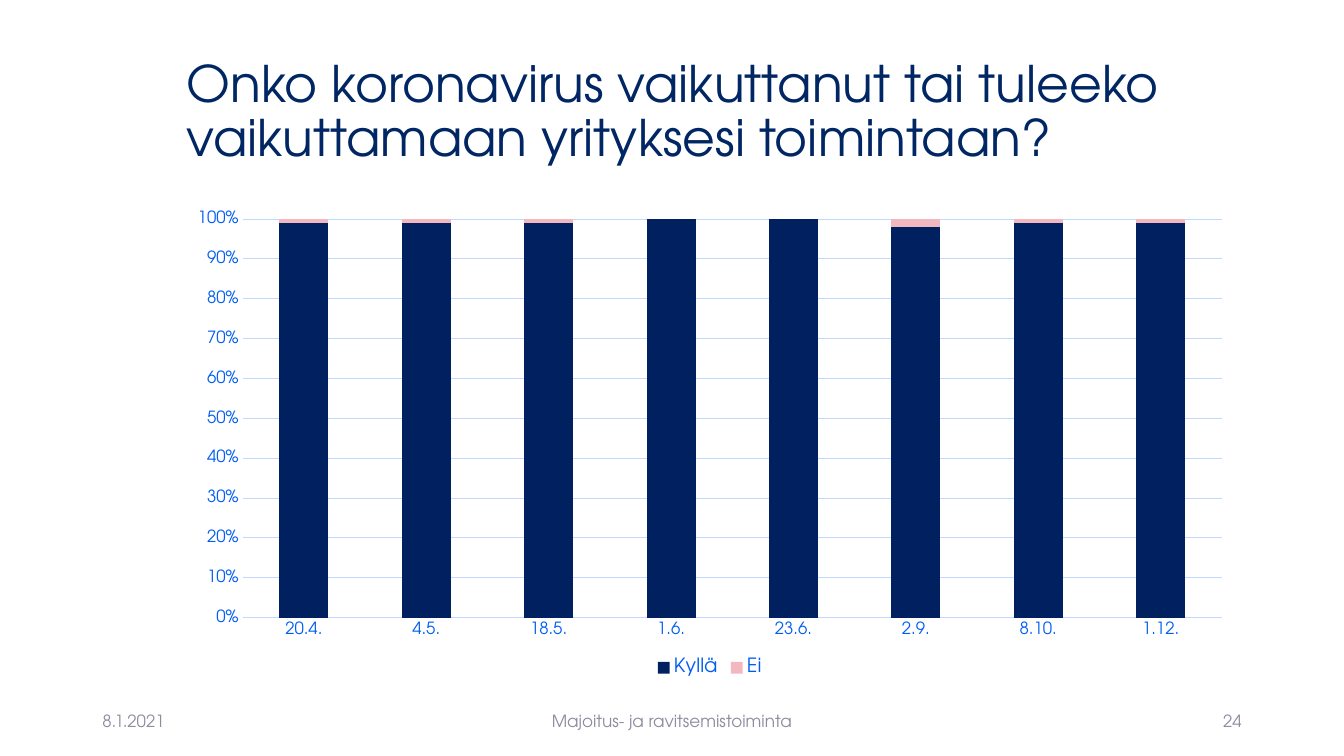
from pptx import Presentation
from pptx.chart.data import CategoryChartData as ChartData
from pptx.dml.color import RGBColor
from pptx.enum.chart import XL_CHART_TYPE as ChartType
from pptx.enum.chart import XL_LEGEND_POSITION as LegendPosition
from pptx.enum.chart import XL_TICK_MARK as TickMark
from pptx.enum.text import MSO_ANCHOR as Anchor
from pptx.enum.text import MSO_AUTO_SIZE as AutoSize
from pptx.enum.text import PP_ALIGN as Align
from pptx.util import Inches, Pt

TITLE_BLUE = RGBColor(0x00, 0x26, 0x63)
LABEL_BLUE = RGBColor(0x00, 0x5D, 0xF3)
GRID_BLUE = RGBColor(0xC1, 0xD9, 0xFF)
FOOTER_GREY = RGBColor(0x8C, 0x8E, 0x9F)
YES_NAVY = RGBColor(0x00, 0x20, 0x60)
NO_PINK = RGBColor(0xF2, 0xB7, 0xBF)

FONT = "TeX Gyre Adventor"
COLUMNS, ROWS = 160, 90  # grid cells of a twelfth of an inch
CELL = Inches(1) / 12


class SlideBuilder:
    """Holds the style and the current slide; places are in grid cells."""

    def __init__(self, deck):
        self.slide = deck.slides.add_slide(deck.slide_layouts[5])

    def place(self, *cells):
        return [round(cell * CELL) for cell in cells]

    def style(self, font, size, color):
        font.name = FONT
        font.size = Pt(size)
        font.bold = False
        font.color.rgb = color

    def fill_text(self, box, text, size, color, align):
        frame = box.text_frame
        frame.text = text
        frame.word_wrap = True
        frame.auto_size = AutoSize.NONE
        frame.vertical_anchor = Anchor.MIDDLE
        para = frame.paragraphs[0]
        para.alignment = align
        self.style(para.runs[0].font, size, color)
        return para

    def title(self, text, *cells):
        box = self.slide.shapes.title
        box.left, box.top, box.width, box.height = self.place(*cells)
        para = self.fill_text(box, text, 36, TITLE_BLUE, Align.LEFT)
        para.line_spacing = 0.9

    def footer(self, text, column, width, align):
        box = self.slide.shapes.add_textbox(*self.place(column, 83.4, width, 4.8))
        self.fill_text(box, text, 12, FOOTER_GREY, align)

    def stacked_chart(self, dates, answers, *cells):
        data = ChartData(number_format="0")
        data.categories = dates
        for name, values, _ in answers:
            data.add_series(name, values)
        frame = self.slide.shapes.add_chart(
            ChartType.COLUMN_STACKED_100, *self.place(*cells), data)
        chart = frame.chart
        chart.has_title = False
        self.style(chart.font, 10, TITLE_BLUE)

        # Columns
        plot = chart.plots[0]
        plot.gap_width = 150
        plot.overlap = 100
        plot.vary_by_categories = False
        for series, (_, _, color) in zip(plot.series, answers):
            series.format.fill.solid()
            series.format.fill.fore_color.rgb = color
            series.invert_if_negative = False

        # Axes and gridlines
        date_axis, share_axis = chart.category_axis, chart.value_axis
        for axis in (date_axis, share_axis):
            axis.major_tick_mark = axis.minor_tick_mark = TickMark.NONE
            self.style(axis.tick_labels.font, 12, LABEL_BLUE)
        share_axis.minimum_scale, share_axis.maximum_scale = 0, 1
        share_axis.major_unit = 0.1
        share_axis.tick_labels.number_format = "0%"
        share_axis.tick_labels.number_format_is_linked = False
        share_axis.format.line.fill.background()
        for line in (date_axis.format.line, share_axis.major_gridlines.format.line):
            line.color.rgb = GRID_BLUE
            line.width = Pt(0.75)

        # Legend
        chart.has_legend = True
        chart.legend.position = LegendPosition.BOTTOM
        chart.legend.include_in_layout = False
        self.style(chart.legend.font, 14, LABEL_BLUE)


def main():
    deck = Presentation()
    deck.slide_width = round(COLUMNS * CELL)
    deck.slide_height = round(ROWS * CELL)
    page = SlideBuilder(deck)

    # Heading
    page.title("Onko koronavirus vaikuttanut tai tuleeko vaikuttamaan "
               "yrityksesi toimintaan?", 21, 4.8, 127, 17.4)

    # Answers by survey date
    dates = ["20.4.", "4.5.", "18.5.", "1.6.", "23.6.", "2.9.", "8.10.", "1.12."]
    yes = [99, 99, 99, 100, 100, 98, 99, 99]
    no = [100 - share for share in yes]
    answers = [("Kyllä", yes, YES_NAVY), ("Ei", no, NO_PINK)]
    page.stacked_chart(dates, answers, 21, 24, 127, 57.1)

    # Footer
    page.footer("8.1.2021", 11, 36, Align.LEFT)
    page.footer("Majoitus- ja ravitsemistoiminta", 53, 54, Align.CENTER)
    page.footer("24", 113, 36, Align.RIGHT)

    deck.save("out.pptx")


if __name__ == "__main__":
    main()
